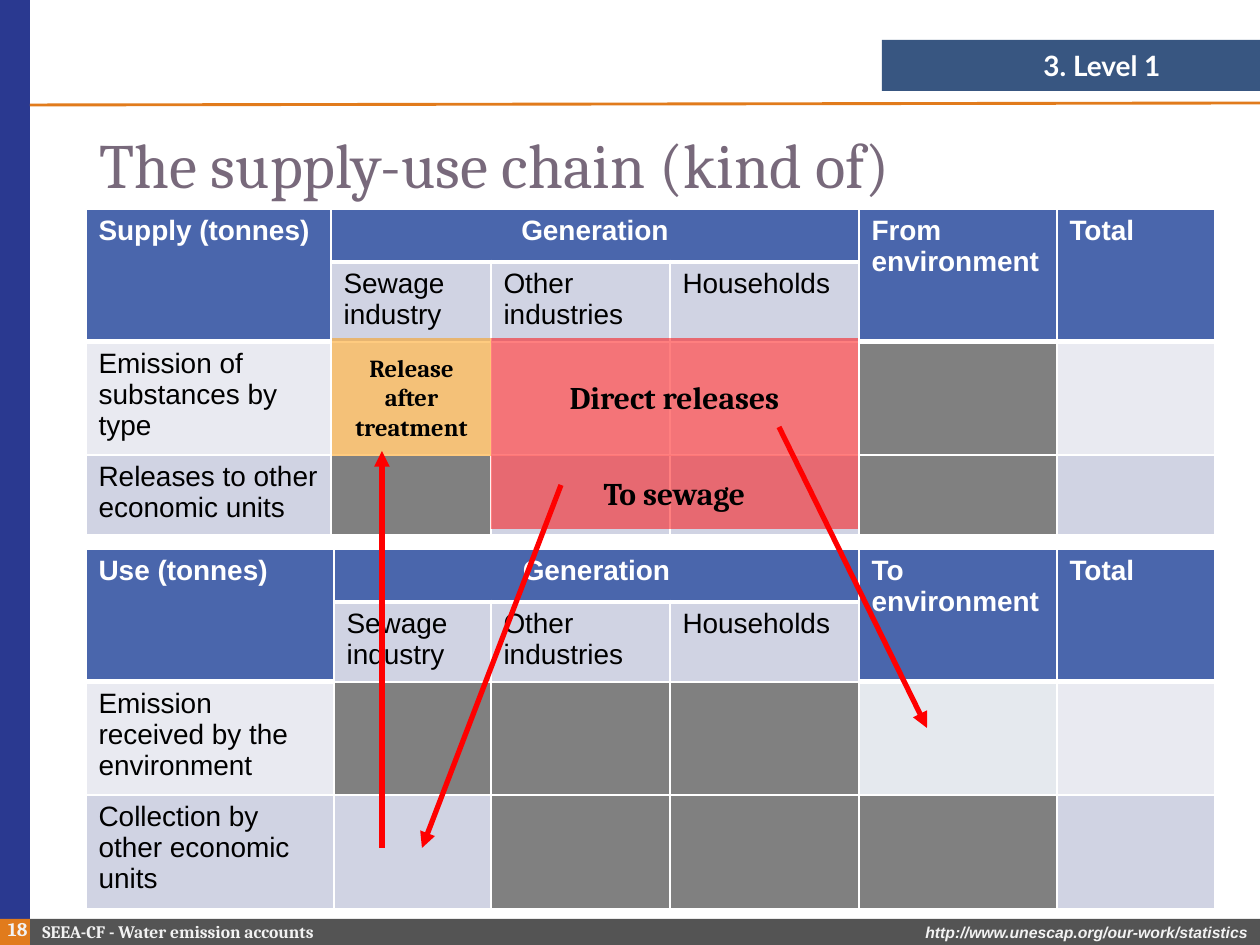
from lxml import etree
from pptx import Presentation
from pptx.dml.color import RGBColor
from pptx.enum.shapes import MSO_CONNECTOR, MSO_SHAPE
from pptx.enum.text import MSO_ANCHOR, PP_ALIGN
from pptx.oxml.ns import qn
from pptx.util import Emu, Pt

RECT = MSO_SHAPE.RECTANGLE
STRAIGHT = MSO_CONNECTOR.STRAIGHT
LEFT, CENTER, RIGHT = PP_ALIGN.LEFT, PP_ALIGN.CENTER, PP_ALIGN.RIGHT
TOP, MIDDLE = MSO_ANCHOR.TOP, MSO_ANCHOR.MIDDLE
C = {"white": "FFFFFF", "black": "000000", "navy": "072C62", "side": "2A3990",
     "bar": "545454", "orange": "E17B1C", "pale": "F2F2F2", "title": "78697B",
     "head": "4A66AC", "band": "D0D3E3", "light": "E9EAF1", "mist": "E5E9EE",
     "grey": "808080", "red": "FF0000", "amber": "FF9900"}


def px(n):
    return Emu(round(n * 914400 / 126))


def rgb(name):
    return RGBColor.from_string(C[name])


class Deck:
    def __init__(self):
        self.prs = Presentation()
        self.prs.slide_width, self.prs.slide_height = px(1260), px(945)
        self.s = self.prs.slides.add_slide(self.prs.slide_layouts[6])

    def para(self, tf, text, size, color, font="Cambria", bold=False,
             italic=False, align=LEFT):
        p = tf.paragraphs[0]
        p.text = text
        p.alignment = align
        f = p.font
        f.name, f.size, f.bold, f.italic = font, Pt(size), bold, italic
        f.color.rgb = rgb(color)

    def text(self, x, y, w, h, text, size, color, anchor=MIDDLE, **style):
        tf = self.s.shapes.add_textbox(px(x), px(y), px(w), px(h)).text_frame
        tf.word_wrap = True
        tf.vertical_anchor = anchor
        self.para(tf, text, size, color, **style)
        return tf

    def box(self, x, y, w, h, fill, alpha=100, text="", size=18):
        sp = self.s.shapes.add_shape(RECT, px(x), px(y), px(w), px(h))
        sp.shadow.inherit = False
        sp.fill.solid()
        sp.fill.fore_color.rgb = rgb(fill)
        sp.line.fill.background()
        if alpha < 100:
            clr = sp._element.spPr.find(qn("a:solidFill"))[0]
            etree.SubElement(clr, qn("a:alpha"), val=str(alpha * 1000))
        if text:
            sp.text_frame.word_wrap = True
            sp.text_frame.vertical_anchor = MIDDLE
            self.para(sp.text_frame, text, size, "black", bold=True, align=CENTER)

    def line(self, x1, y1, x2, y2, color, width, arrow=False):
        cn = self.s.shapes.add_connector(STRAIGHT, px(x1), px(y1), px(x2), px(y2))
        cn.line.color.rgb = rgb(color)
        cn.line.width = Pt(width)
        if arrow:
            ln = cn._element.spPr.find(qn("a:ln"))
            etree.SubElement(ln, qn("a:tailEnd"), type="triangle")
        etree.SubElement(cn._element.spPr, qn("a:effectLst"))

    def cell(self, cell, text, fill, head, align):
        tc_pr = cell._tc.get_or_add_tcPr()
        for side in ("lnL", "lnR", "lnT", "lnB"):
            width = Pt(3 if head and side == "lnB" else 1)
            ln = etree.SubElement(tc_pr, qn("a:" + side), w=str(int(width)))
            solid = etree.SubElement(ln, qn("a:solidFill"))
            etree.SubElement(solid, qn("a:srgbClr"), val=C["white"])
        cell.fill.solid()
        cell.fill.fore_color.rgb = rgb(fill)
        self.para(cell.text_frame, text, 16, "white" if head else "black",
                  font="Arial", bold=head, align=align)

    def table(self, x, y, cols, rows, texts, fills):
        t = self.s.shapes.add_table(len(rows), len(cols), px(x), px(y),
                                    px(sum(cols)), px(sum(rows))).table
        for col, w in zip(t.columns, cols):
            col.width = px(w)
        for row, h in zip(t.rows, rows):
            row.height = px(h)
        for r in range(len(rows)):
            for c in range(len(cols)):
                head = r == 0 or (r == 1 and c in (0, 4, 5))
                align = CENTER if (r, c) == (0, 1) else LEFT
                self.cell(t.cell(r, c), texts.get((r, c), ""), fills[r][c], head, align)
        t.cell(0, 1).merge(t.cell(0, 3))
        for c in (0, 4, 5):
            t.cell(0, c).merge(t.cell(1, c))


def flow_table(deck, y, cols, rows, name, partner, labels, body):
    texts = {(0, 0): name, (0, 1): "Generation", (0, 4): partner, (0, 5): "Total",
             (1, 1): "Sewage industry", (1, 2): "Other industries",
             (1, 3): "Households", (2, 0): labels[0], (3, 0): labels[1]}
    fills = [["head"] * 6, ["head"] + ["band"] * 3 + ["head"] * 2] + body
    deck.table(86, y, cols, rows, texts, fills)


def main():
    d = Deck()
    d.box(882, 40, 378, 51, "navy", 80)
    d.box(30, 919, 1230, 26, "bar")
    d.box(0, 0, 30, 945, "side")
    d.box(0, 919, 30, 26, "orange")
    d.line(30, 105, 1260, 103, "orange", 1.65)
    d.text(789, 917, 471, 28, "http://www.unescap.org/our-work/statistics", 9,
           "pale", anchor=TOP, font="Arial", bold=True, italic=True, align=RIGHT)
    title = d.text(87, 112, 1086, 112, "The supply-use chain (kind of)", 36, "title")
    title.paragraphs[0].line_spacing = 0.9
    d.text(30, 919, 377, 26, "SEEA-CF - Water emission accounts", 10, "pale", bold=True)
    number = d.text(0, 912, 40, 33, "18", 11, "pale", bold=True, align=RIGHT)
    number.margin_left = 0

    flow_table(d, 209, [245, 160, 179, 189, 198, 158], [53, 79, 112, 74],
               "Supply (tonnes)", "From environment",
               ["Emission of substances by type", "Releases to other economic units"],
               [["light"] * 4 + ["grey", "light"],
                ["band", "grey", "band", "band", "grey", "band"]])
    flow_table(d, 549, [248, 157, 179, 189, 198, 158], [53, 79, 112, 112],
               "Use (tonnes)", "To environment",
               ["Emission received by the environment",
                "Collection by other economic units"],
               [["light"] + ["grey"] * 3 + ["mist", "light"],
                ["band"] * 2 + ["grey"] * 3 + ["band"]])

    d.box(491, 338, 367, 118, "red", 50, "Direct releases")
    d.line(779, 427, 927, 728, "red", 3, arrow=True)
    d.box(491, 456, 367, 73, "red", 50, "To sewage")
    d.line(561, 485, 422, 848, "red", 3, arrow=True)
    d.box(332, 338, 159, 118, "amber", 50, "Release after treatment", 14)
    d.line(382, 848, 382, 451, "red", 3, arrow=True)
    d.text(882, 42, 291, 47, "3. Level 1", 16, "white", font="Lato", bold=True, align=RIGHT)
    d.prs.save("out.pptx")


if __name__ == "__main__":
    main()
